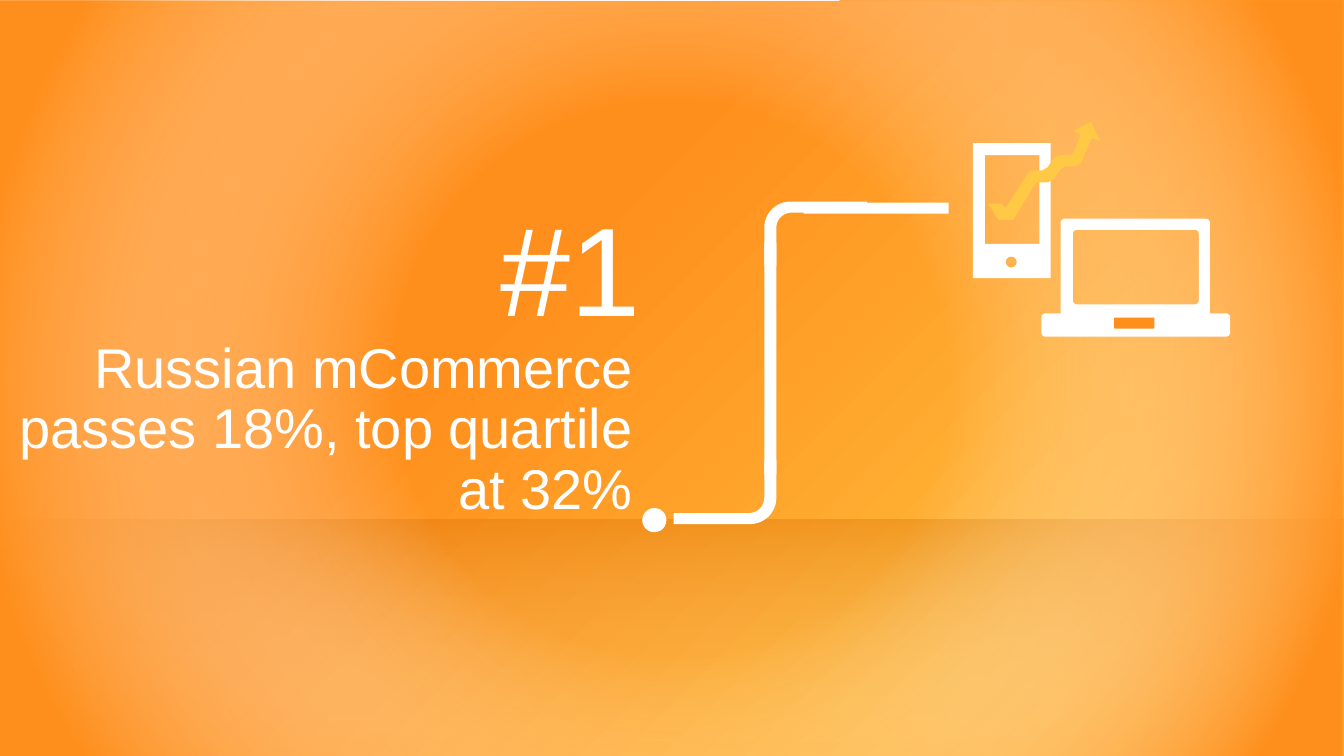
import math
from lxml import etree
from pptx import Presentation, util as u
from pptx.dml.color import RGBColor
from pptx.enum import shapes, text
from pptx.oxml import ns

# Content
TEXTS = [
    dict(words="#1", box=(1.17, 1.98, 5.18, 1.47), size="number",
         frame=dict(vertical_anchor=text.MSO_ANCHOR.TOP, margin_right=0)),
    dict(words="Russian mCommerce passes 18%, top quartile at 32%",
         box=(0, 2.36, 6.35, 2.89), size="message",
         frame=dict(vertical_anchor=text.MSO_ANCHOR.BOTTOM, margin_right=u.Inches(0.08))),
]

# Theme
THEME = dict(font="Arial", number=90, message=40, white="FFFFFF",
             orange="FF8F1C", yellow="FFC845", shade="D46C00", pale="F2F2F2")
FRAME = dict(word_wrap=True, margin_left=u.Inches(0.08),
             margin_top=u.Inches(0.08), margin_bottom=u.Inches(0.08))
PARAGRAPH = dict(alignment=text.PP_ALIGN.RIGHT, line_spacing=0.9, space_before=u.Pt(10))

# Background layers: top, height, (position, colour, opacity) stops, angle or None for radial
WIDTH, HEIGHT = 13.33, 7.5
LAYERS = [
    (0.01, HEIGHT, [(38, "orange", 100), (93, "yellow", 100)], 45),
    (5.15, 2.36, [(0, "shade", 31), (100, "pale", 0)], 90),
    (0.01, HEIGHT, [(36, "white", 0), (91, "orange", 100)], None),
]

# Icon outlines
TICK_LONG = [(10.13, 1.82), (9.94, 2.12), (9.9, 2.18), (10.05, 2.18), (10.27, 1.82)]
TICK_SHORT = [(10.01, 2.12), (9.94, 2.02), (9.8, 2.02), (9.9, 2.18), (10.05, 2.18)]
TREND = [(10.91, 1.4), (10.82, 1.21), (10.64, 1.3), (10.72, 1.33), (10.65, 1.51),
         (10.61, 1.54), (10.51, 1.54), (10.46, 1.56), (10.39, 1.66), (10.34, 1.69),
         (10.26, 1.69), (10.21, 1.7), (10.12, 1.83), (10.22, 1.89), (10.27, 1.82),
         (10.32, 1.81), (10.39, 1.81), (10.45, 1.78), (10.52, 1.68), (10.57, 1.65),
         (10.67, 1.65), (10.72, 1.62), (10.75, 1.55), (10.83, 1.37)]


def set_all(obj, values):
    for name, value in values.items():
        setattr(obj, name, value)


def arc(cx, cy, r, start, end, steps=12):
    angles = [math.radians(start + (end - start) * i / steps) for i in range(steps + 1)]
    return [(cx + r * math.cos(a), cy + r * math.sin(a)) for a in angles]


def rounded(left, top, right, bottom, r=0):
    corners = [(right - r, bottom - r), (left + r, bottom - r),
               (left + r, top + r), (right - r, top + r)]
    if not r:
        return corners
    return [pt for i, (x, y) in enumerate(corners) for pt in arc(x, y, r, 90 * i, 90 * i + 90)]


def finish(sp, color):
    sp.shadow.inherit = False
    sp.line.fill.background()
    sp.fill.solid()
    sp.fill.fore_color.rgb = RGBColor.from_string(THEME[color])
    return sp


def add_preset(slide, kind, box, color="white"):
    return finish(slide.shapes.add_shape(kind, *map(u.Inches, box)), color)


def add_outline(slide, color, outer, *holes):
    contours = [outer] + [hole[::-1] for hole in holes]
    contours = [[(u.Inches(x), u.Inches(y)) for x, y in c] for c in contours]
    builder = slide.shapes.build_freeform(*contours[0][0])
    for i, points in enumerate(contours):
        if i:
            builder.move_to(*points[0])
        builder.add_line_segments(points[1:], close=True)
    return finish(builder.convert_to_shape(), color)


def add_gradient(sp, stops, angle):
    grad = etree.Element(ns.qn("a:gradFill"), rotWithShape="1")
    gs_list = etree.SubElement(grad, ns.qn("a:gsLst"))
    for position, color, opacity in stops:
        gs = etree.SubElement(gs_list, ns.qn("a:gs"), pos=str(position * 1000))
        clr = etree.SubElement(gs, ns.qn("a:srgbClr"), val=THEME[color])
        if opacity < 100:
            etree.SubElement(clr, ns.qn("a:alpha"), val=str(opacity * 1000))
    if angle is None:
        radial = etree.SubElement(grad, ns.qn("a:path"))
        radial.set("path", "circle")
        etree.SubElement(radial, ns.qn("a:fillToRect"), l="50000", t="50000", r="50000", b="50000")
    else:
        etree.SubElement(grad, ns.qn("a:lin"), ang=str(angle * 60000), scaled="0")
    solid = sp.element.spPr.find(ns.qn("a:solidFill"))
    solid.getparent().replace(solid, grad)


def add_text(slide, item):
    tf = slide.shapes.add_textbox(*map(u.Inches, item["box"])).text_frame
    set_all(tf, FRAME | item["frame"])
    p = tf.paragraphs[0]
    set_all(p, PARAGRAPH)
    r = p.add_run()
    r.text = item["words"]
    set_all(r.font, dict(name=THEME["font"], size=u.Pt(THEME[item["size"]])))
    r.font.color.rgb = RGBColor.from_string(THEME["white"])


def main():
    prs = Presentation()
    set_all(prs, dict(slide_width=u.Inches(WIDTH), slide_height=u.Inches(HEIGHT)))
    slide = prs.slides.add_slide(prs.slide_layouts[6])
    rect, oval = shapes.MSO_SHAPE.RECTANGLE, shapes.MSO_SHAPE.OVAL

    # Background
    for top, height, stops, angle in LAYERS:
        add_gradient(add_preset(slide, rect, (0, top, WIDTH, height)), stops, angle)

    # Text
    for item in TEXTS:
        add_text(slide, item)

    # Connecting pipe: the upper bend is the lower one turned by 180 degrees
    bend = ([(7.58, 4.56), (7.7, 4.56)] + arc(7.44, 4.94, 0.26, 0, 90)
            + [(6.68, 5.2), (6.68, 5.09)] + arc(7.43, 4.94, 0.15, 90, 0))
    add_outline(slide, "white", bend)
    add_preset(slide, oval, (6.37, 5.04, 0.24, 0.24))
    add_preset(slide, rect, (7.58, 2.41, 0.12, 2.3))
    add_outline(slide, "white", [(15.28 - x, 7.2 - y) for x, y in bend])
    add_preset(slide, rect, (7.97, 2.01, 1.44, 0.11))

    # Phone with tick
    add_outline(slide, "white", rounded(9.65, 1.42, 10.42, 2.76),
                rounded(9.77, 1.54, 10.31, 2.42), arc(10.03, 2.6, 0.055, 0, 360))
    add_outline(slide, "yellow", TICK_LONG)
    add_outline(slide, "yellow", TICK_SHORT)

    # Laptop: screen, base, button
    add_outline(slide, "white", rounded(10.52, 2.17, 12, 3.18, 0.04),
                rounded(10.64, 2.28, 11.89, 3.02, 0.04))
    add_outline(slide, "white", rounded(10.33, 3.11, 12.2, 3.34, 0.04))
    add_outline(slide, "orange", rounded(11.05, 3.15, 11.45, 3.26, 0.01))

    # Trend arrow
    add_outline(slide, "yellow", TREND)
    prs.save("out.pptx")


if __name__ == "__main__":
    main()
